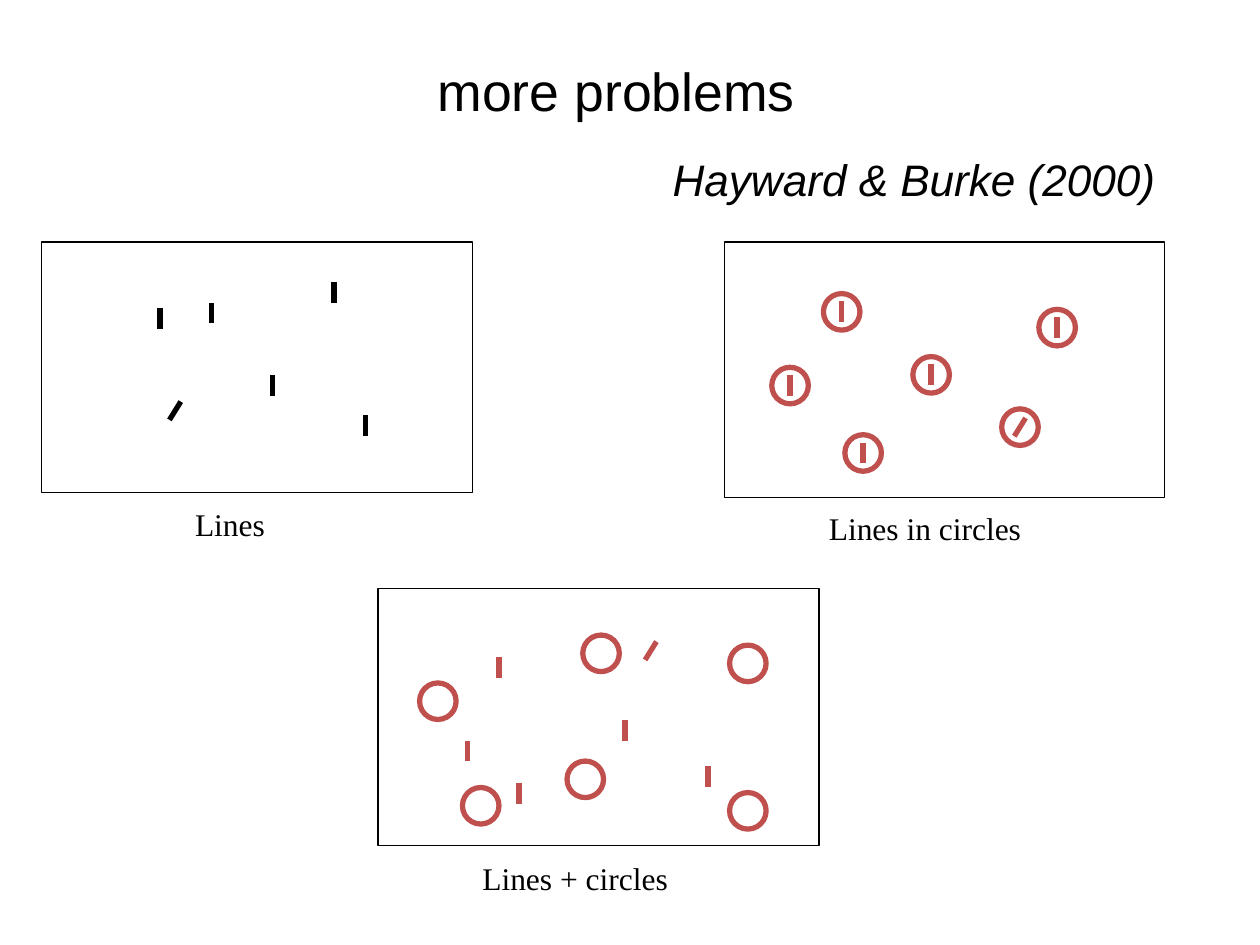
from dataclasses import dataclass

from lxml import etree
from pptx import Presentation
from pptx.dml.color import RGBColor
from pptx.enum import shapes, text
from pptx.oxml import ns
from pptx.util import Inches, Pt


@dataclass(frozen=True)
class Theme:
    black: RGBColor = RGBColor(0x00, 0x00, 0x00)
    white: RGBColor = RGBColor(0xFF, 0xFF, 0xFF)
    red: RGBColor = RGBColor(0xC0, 0x50, 0x4D)
    sans: str = "Arial"
    serif: str = "Times New Roman"
    title: float = 30.6
    cite: float = 25.2
    label: float = 18
    frame: float = 0.75
    mark: float = 3


THEME = Theme()
RING = 0.29   # ring diameter
BAR = 0.165   # upright bar length
TILT = (0.09, 0.145)  # width and height of a tilted bar

# Centres of the marks in each panel; the tilted bar is the odd one out.
LINES = [(1.27, 2.53), (1.68, 2.485), (2.16, 3.06), (2.65, 2.32), (2.9, 3.38)]
LINES_ODD = (1.39, 3.26)
RINGED = [(6.68, 2.475), (6.27, 3.06), (7.39, 2.975), (8.39, 2.6), (6.85, 3.595)]
RINGED_ODD = (8.095, 3.39)
MIXED = [(3.96, 5.295), (4.12, 6.295), (3.71, 5.96), (4.96, 5.795), (5.62, 6.165)]
MIXED_ODD = (5.165, 5.165)
RINGS = [(4.645, 6.185), (4.77, 5.185), (5.935, 6.435),
         (3.815, 6.395), (3.475, 5.565), (5.935, 5.265)]


def style(para, font, size, italic=False):
    para.font.name = font
    para.font.size = Pt(size)
    para.font.italic = italic
    para.font.color.rgb = THEME.black


def add_title(slide, title, cite):
    """Centre the title and set the citation at the right below it."""
    box = slide.shapes.add_textbox(Inches(0.33), Inches(0.33), Inches(9.42), Inches(1.25))
    frame = box.text_frame
    frame.word_wrap = True
    frame.margin_left, frame.margin_right = Inches(0.28), Inches(0.58)
    frame.margin_top = Inches(0.13)
    head = frame.paragraphs[0]
    head.text = title
    head.alignment = text.PP_ALIGN.CENTER
    style(head, THEME.sans, THEME.title)
    note = frame.add_paragraph()
    note.text = cite
    note.alignment = text.PP_ALIGN.RIGHT
    note.space_before = Pt(17.5)
    style(note, THEME.sans, THEME.cite, italic=True)


def add_label(slide, words, left, top, width):
    box = slide.shapes.add_textbox(Inches(left), Inches(top), Inches(width), Inches(0.5))
    box.text_frame.word_wrap = True
    para = box.text_frame.paragraphs[0]
    para.text = words
    style(para, THEME.serif, THEME.label)


def add_panel(slide, left, top, width, height):
    panel = slide.shapes.add_shape(shapes.MSO_SHAPE.RECTANGLE, Inches(left), Inches(top),
                                   Inches(width), Inches(height))
    panel.shadow.inherit = False
    panel.fill.solid()
    panel.fill.fore_color.rgb = THEME.white
    panel.line.color.rgb = THEME.black
    panel.line.width = Pt(THEME.frame)


def add_bar(parent, spot, color, tilted=False):
    x, y = spot
    wide, high = TILT if tilted else (0, BAR)
    bar = parent.shapes.add_connector(
        shapes.MSO_CONNECTOR.STRAIGHT,
        Inches(x - wide / 2), Inches(y + high / 2),
        Inches(x + wide / 2), Inches(y - high / 2))
    bar.line.color.rgb = color
    bar.line.width = Pt(THEME.mark)
    etree.SubElement(bar._element.spPr, ns.qn("a:effectLst"))


def add_ring(parent, spot):
    x, y = spot
    ring = parent.shapes.add_shape(shapes.MSO_SHAPE.OVAL, Inches(x - RING / 2),
                                   Inches(y - RING / 2), Inches(RING), Inches(RING))
    ring.shadow.inherit = False
    ring.fill.background()
    ring.line.color.rgb = THEME.red
    ring.line.width = Pt(THEME.mark)


def add_bars(slide, spots, odd, color):
    for spot in spots:
        add_bar(slide, spot, color)
    add_bar(slide, odd, color, tilted=True)


def add_ringed(slide, spot, tilted=False):
    """Group a bar with the ring around it."""
    group = slide.shapes.add_group_shape()
    add_bar(group, spot, THEME.red, tilted)
    add_ring(group, spot)


def main():
    deck = Presentation()
    deck.slide_width, deck.slide_height = Inches(10), Inches(7.5)
    slide = deck.slides.add_slide(deck.slide_layouts[6])

    add_title(slide, "more problems", "Hayward & Burke (2000)")

    add_panel(slide, 0.33, 1.92, 3.42, 1.99)
    add_bars(slide, LINES, LINES_ODD, THEME.black)
    add_label(slide, "Lines", 1.45, 3.96, 0.94)

    add_panel(slide, 5.75, 1.92, 3.49, 2.03)
    for spot in RINGED:
        add_ringed(slide, spot)
    add_ringed(slide, RINGED_ODD, tilted=True)
    add_label(slide, "Lines in circles", 6.48, 3.99, 2.24)

    add_panel(slide, 3, 4.67, 3.5, 2.04)
    add_bars(slide, MIXED, MIXED_ODD, THEME.red)
    for spot in RINGS:
        add_ring(slide, spot)
    add_label(slide, "Lines + circles", 3.73, 6.77, 2.17)

    deck.save("out.pptx")


if __name__ == "__main__":
    main()
